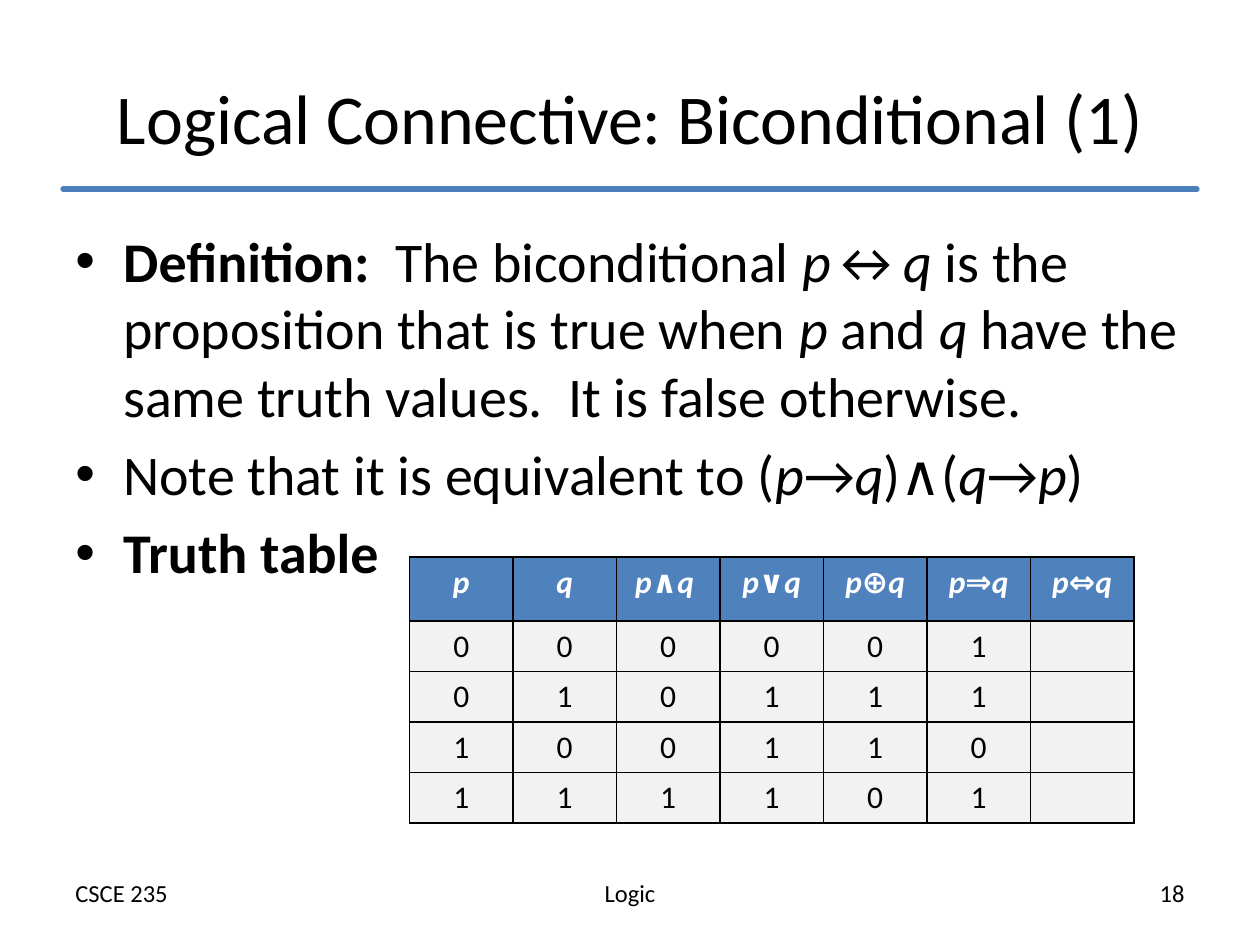
from pptx import Presentation
from pptx.dml.color import RGBColor
from pptx.enum.shapes import MSO_CONNECTOR
from pptx.enum.text import MSO_ANCHOR, PP_ALIGN
from pptx.oxml import parse_xml
from pptx.oxml.ns import nsdecls
from pptx.util import Inches, Pt
from lxml.etree import SubElement
from pptx.oxml.ns import qn

BLACK = RGBColor(0x00, 0x00, 0x00)
WHITE = RGBColor(0xFF, 0xFF, 0xFF)
RULE_BLUE = RGBColor(0x4B, 0x7E, 0xBC)
HEADER_BLUE = RGBColor(0x4F, 0x81, 0xBD)
CELL_GREY = RGBColor(0xF2, 0xF2, 0xF2)

TITLE = "Logical Connective: Biconditional (1)"
BULLETS = [
    "*Definition: * The biconditional _p_↔_q_ is the proposition that is true when "
    "_p_ and _q_ have the same truth values.  It is false otherwise.",
    "Note that it is equivalent to (_p_→_q_)∧(_q_→_p_)",
    "*Truth table*",
]
HEADERS = ["_p_", "_q_", "_p_∧_q _", "_p_∨_q_", "_p_⊕_q_", "_p_⇒_q_", "_p⇔q_"]
TRUTH_VALUES = ["000001", "010111", "100110", "111101"]


def write(paragraph, marked_text, size, color=BLACK, bold=False, align=PP_ALIGN.LEFT):
    paragraph.alignment = align
    paragraph.font.name = "Calibri"
    paragraph.font.size = Pt(size)
    paragraph.font.color.rgb = color
    paragraph.font.bold = bold
    for bold_index, bold_part in enumerate(marked_text.split("*")):
        for italic_index, text in enumerate(bold_part.split("_")):
            if text:
                run = paragraph.add_run()
                run.text = text
                run.font.bold = bold or bold_index % 2 == 1
                run.font.italic = italic_index % 2 == 1


def add_text_frame(slide, left, top, width, height, anchor=MSO_ANCHOR.TOP):
    shape = slide.shapes.add_textbox(left, top, width, height)
    frame = shape.text_frame
    frame.word_wrap = True
    frame.vertical_anchor = anchor
    return frame


def add_title(slide, left, top, width, height):
    frame = add_text_frame(slide, left, top, width, height, MSO_ANCHOR.MIDDLE)
    write(frame.paragraphs[0], TITLE, 40, align=PP_ALIGN.CENTER)


def add_rule(slide, left, top, width):
    rule = slide.shapes.add_connector(MSO_CONNECTOR.STRAIGHT, left, top, left + width, top)
    rule.line.color.rgb = RULE_BLUE
    rule.line.width = Pt(3)
    rule.line._get_or_add_ln().set("cap", "rnd")
    SubElement(rule._element.spPr, qn("a:effectLst"))


def add_bullets(slide, left, top, width, height):
    frame = add_text_frame(slide, left, top, width, height)
    for index, text in enumerate(BULLETS):
        paragraph = frame.add_paragraph() if index else frame.paragraphs[0]
        write(paragraph, text, 32)
        paragraph.space_before = Pt(6.4)
        properties = paragraph._p.get_or_add_pPr()
        properties.set("marL", str(Inches(0.38)))
        properties.set("indent", str(-Inches(0.38)))
        font = properties.find(qn("a:defRPr"))
        font.addprevious(parse_xml(f'<a:buFont {nsdecls("a")} typeface="Arial"/>'))
        font.addprevious(parse_xml(f'<a:buChar {nsdecls("a")} char="•"/>'))


def add_borders(cell):
    properties = cell._tc.get_or_add_tcPr()
    for index, side in enumerate(("lnL", "lnR", "lnT", "lnB")):
        border = parse_xml(
            f'<a:{side} {nsdecls("a")} w="{Pt(1)}"><a:solidFill>'
            f'<a:srgbClr val="{BLACK}"/></a:solidFill></a:{side}>'
        )
        properties.insert(index, border)


def add_truth_table(slide, left, top, width, header_height, row_height):
    rows = [HEADERS] + [list(values) + [""] for values in TRUTH_VALUES]
    height = header_height + row_height * len(TRUTH_VALUES)
    table = slide.shapes.add_table(len(rows), len(HEADERS), left, top, width, height).table
    for row_index, texts in enumerate(rows):
        is_header = row_index == 0
        table.rows[row_index].height = header_height if is_header else row_height
        for column_index, text in enumerate(texts):
            cell = table.cell(row_index, column_index)
            cell.fill.solid()
            cell.fill.fore_color.rgb = HEADER_BLUE if is_header else CELL_GREY
            add_borders(cell)
            write(cell.text_frame.paragraphs[0], text, 18,
                  WHITE if is_header else BLACK, is_header, PP_ALIGN.CENTER)


def add_footer(slide, left, top, width, height):
    part_width = Inches(2.92)
    gap = (width - 3 * part_width) // 2
    parts = [("CSCE 235", PP_ALIGN.LEFT), ("Logic", PP_ALIGN.CENTER), ("18", PP_ALIGN.RIGHT)]
    for index, (text, align) in enumerate(parts):
        frame = add_text_frame(slide, left + index * (part_width + gap), top, part_width, height)
        write(frame.paragraphs[0], text, 14, align=align)


def main():
    presentation = Presentation()
    presentation.slide_width = Inches(10)
    presentation.slide_height = Inches(7.5)
    slide = presentation.slides.add_slide(presentation.slide_layouts[6])
    left, width = Inches(0.5), Inches(9)
    add_footer(slide, left, Inches(6.92), width, Inches(0.34))
    add_rule(slide, left, Inches(1.5), width)
    add_title(slide, left, Inches(0.3), width, Inches(1.25))
    add_bullets(slide, left, Inches(1.75), width, Inches(4.95))
    add_truth_table(slide, Inches(3.25), Inches(4.42), Inches(5.75), Inches(0.51), Inches(0.4))
    presentation.save("out.pptx")


if __name__ == "__main__":
    main()
